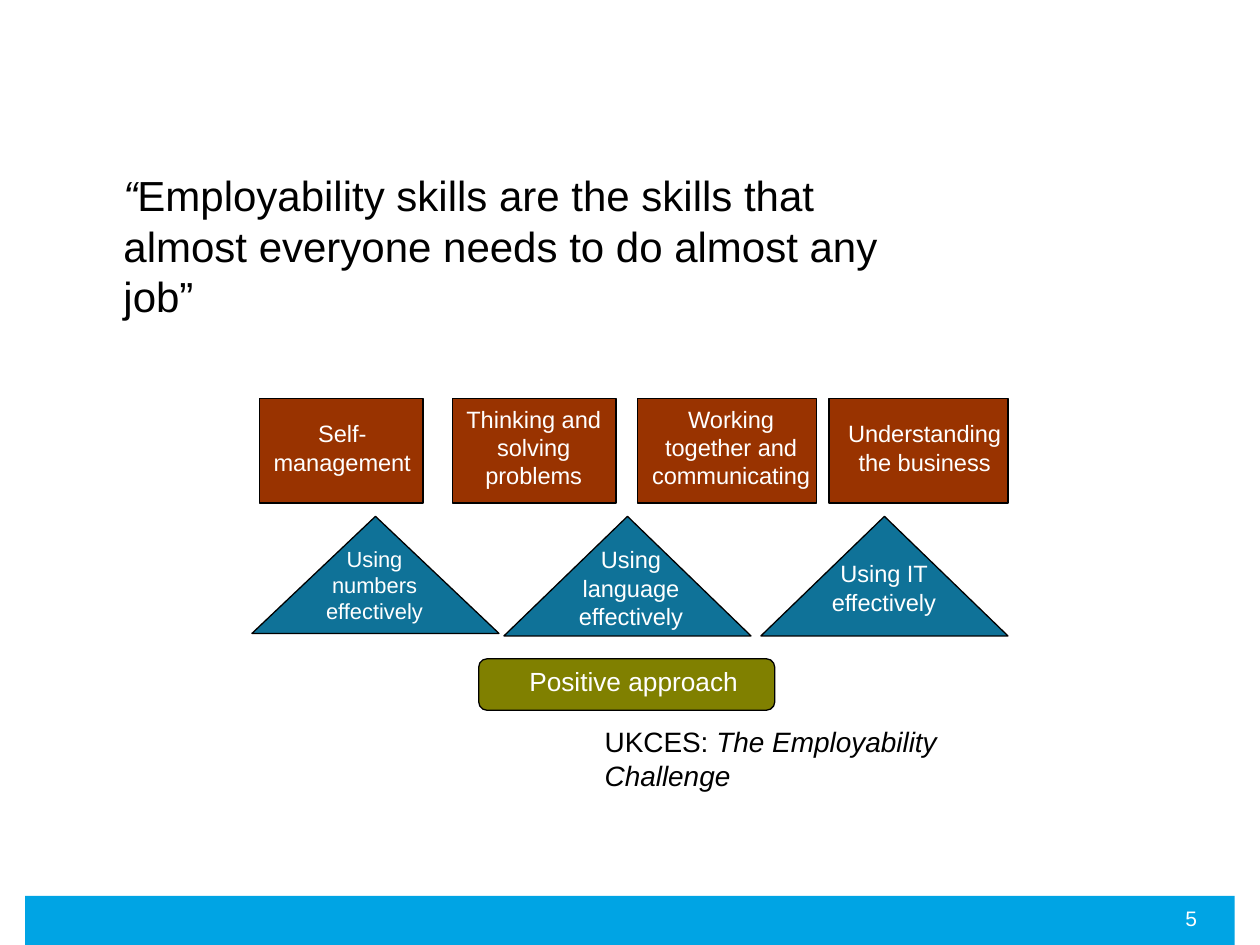
from typing import NamedTuple

from pptx import Presentation
from pptx import util as u
from pptx.dml.color import RGBColor
from pptx.enum import shapes, text

HUES = {"bar": "00A4E4", "brick": "993300", "teal": "0F7298",
        "olive": "808000", "black": "000000", "white": "FFFFFF"}
KIND = shapes.MSO_SHAPE
ALIGN = text.PP_ALIGN


class Box(NamedTuple):
    """Left, top, width and height in centimetres."""
    left: float
    top: float
    width: float
    height: float


class Skill(NamedTuple):
    """A filled shape with its label and the place of that label."""
    label: str
    shape: Box
    place: Box
    size: float = 13.5


BRICKS = [
    Skill("Self-management", Box(5.23, 8.03, 3.3, 2.11), Box(5.11, 8.33, 3.58, 1.42)),
    Skill("Thinking and solving problems", Box(9.12, 8.03, 3.3, 2.11),
          Box(9.12, 8.03, 3.28, 1.98)),
    Skill("Working together and communicating", Box(12.85, 8.03, 3.61, 2.11),
          Box(12.85, 8.03, 3.78, 1.98)),
    Skill("Understanding the business", Box(16.71, 8.03, 3.61, 2.11),
          Box(16.71, 8.33, 3.86, 1.42)),
]
PEAKS = [
    Skill("Using numbers effectively", Box(5.08, 10.41, 4.98, 2.36),
          Box(6.28, 10.87, 2.54, 1.85), 12.5),
    Skill("Using language effectively", Box(10.16, 10.41, 4.98, 2.41),
          Box(11.35, 10.87, 2.74, 1.98)),
    Skill("Using IT effectively", Box(15.34, 10.41, 4.98, 2.41),
          Box(16.41, 11.15, 2.82, 1.42)),
]
BASE = [Skill("Positive approach", Box(9.65, 13.28, 5.97, 1.04),
              Box(10.21, 13.28, 5.13, 0.89), 15)]
ROWS = [(BRICKS, KIND.RECTANGLE, "brick"),
        (PEAKS, KIND.ISOSCELES_TRIANGLE, "teal"),
        (BASE, KIND.ROUNDED_RECTANGLE, "olive")]


def tint(name: str) -> RGBColor:
    """Look up a colour by name."""
    return RGBColor.from_string(HUES[name])


def block(slide, kind: KIND, box: Box, fill: str, edge: str = ""):
    """Draw a filled preset shape, outlined if an edge colour is given."""
    shape = slide.shapes.add_shape(kind, *map(u.Cm, box))
    shape.shadow.inherit = False
    shape.fill.solid()
    shape.fill.fore_color.rgb = tint(fill)
    if edge:
        shape.line.color.rgb = tint(edge)
        shape.line.width = u.Pt(0.75)
    else:
        shape.line.fill.background()
    return shape


def write(slide, box: Box, *parts: tuple[str, bool], size: float = 13.5,
          hue: str = "white", align: ALIGN = ALIGN.CENTER):
    """Write parts, each a wording and its italic flag, in one paragraph."""
    frame = slide.shapes.add_textbox(*map(u.Cm, box)).text_frame
    frame.word_wrap = True
    para = frame.paragraphs[0]
    para.alignment = align
    for words, slant in parts:
        run = para.add_run()
        run.text = words
        run.font.name = "Arial"
        run.font.size = u.Pt(size)
        run.font.italic = slant
        run.font.color.rgb = tint(hue)
    return frame


def main() -> None:
    """Build the employability skills slide."""
    deck = Presentation()
    deck.slide_width, deck.slide_height = u.Cm(25.4), u.Cm(19.05)
    slide = deck.slides.add_slide(deck.slide_layouts[6])

    block(slide, KIND.RECTANGLE, Box(0.51, 18.06, 24.38, 0.99), "bar")
    write(slide, Box(2.24, 3.3, 17.04, 3.33), ("“", True),
          ("Employability skills are the skills that almost everyone "
           "needs to do almost any job”", False),
          size=24, hue="black", align=ALIGN.LEFT)
    for row, kind, fill in ROWS:
        for skill in row:
            block(slide, kind, skill.shape, fill, "black")
        for skill in row:
            write(slide, skill.place, (skill.label, False), size=skill.size)
    write(slide, Box(11.94, 14.48, 9.7, 1.63), ("UKCES: ", False),
          ("The Employability Challenge", True),
          size=16, hue="black", align=ALIGN.LEFT)
    page = write(slide, Box(22.91, 18.16, 1.22, 0.71), ("5", False),
                 size=12, align=ALIGN.RIGHT)
    page.margin_left = page.margin_right = 0
    page.vertical_anchor = text.MSO_ANCHOR.MIDDLE

    deck.save("out.pptx")


if __name__ == "__main__":
    main()
